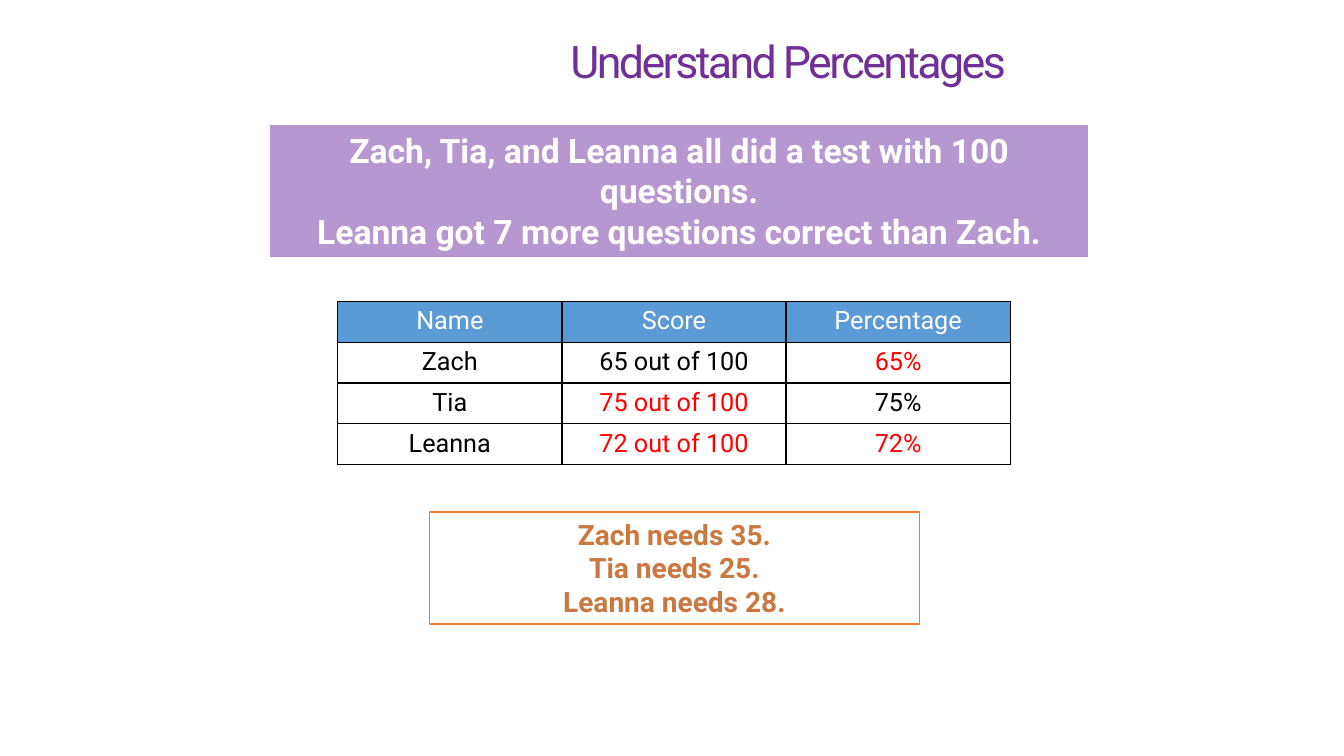
from lxml.etree import SubElement
from pptx import Presentation
from pptx.dml.color import RGBColor
from pptx.enum.shapes import MSO_SHAPE
from pptx.enum.text import MSO_ANCHOR, MSO_AUTO_SIZE, PP_ALIGN
from pptx.oxml.ns import qn
from pptx.util import Inches, Pt

FONT = "Roboto"
TITLE_PURPLE = RGBColor(0x70, 0x30, 0x96)
BANNER_PURPLE = RGBColor(0x70, 0x30, 0xA0)
HEADER_BLUE = RGBColor(0x5B, 0x9B, 0xD5)
ANSWER_RED = RGBColor(0xFF, 0x00, 0x00)
ORANGE = RGBColor(0xED, 0x7D, 0x31)
BROWN = RGBColor(0xCA, 0x78, 0x40)
BLACK = RGBColor(0x00, 0x00, 0x00)
WHITE = RGBColor(0xFF, 0xFF, 0xFF)

SCORES = [
    ["Name", "Score", "Percentage"],
    ["Zach", "65 out of 100", "65%"],
    ["Tia", "75 out of 100", "75%"],
    ["Leanna", "72 out of 100", "72%"],
]
ANSWERS = {"65%", "75 out of 100", "72 out of 100", "72%"}


def write(text_frame, text, size, color, bold=False, align=PP_ALIGN.CENTER):
    text_frame.text = text
    for paragraph in text_frame.paragraphs:
        paragraph.alignment = align
        for run in paragraph.runs:
            run.font.name = FONT
            run.font.size = Pt(size)
            run.font.bold = bold
            run.font.color.rgb = color


def add_title(slide, left, top, width, height):
    title = slide.shapes.add_textbox(
        Inches(left), Inches(top), Inches(width), Inches(height))
    frame = title.text_frame
    frame.word_wrap = False
    frame.auto_size = MSO_AUTO_SIZE.SHAPE_TO_FIT_TEXT
    write(frame, "Understand Percentages", 32, TITLE_PURPLE, align=PP_ALIGN.LEFT)
    # Tighter letter spacing, in hundredths of a point
    frame.paragraphs[0].runs[0].font._element.set("spc", "-190")


def add_panel(slide, left, top, width, height, text, size, color):
    panel = slide.shapes.add_shape(
        MSO_SHAPE.RECTANGLE,
        Inches(left), Inches(top), Inches(width), Inches(height))
    panel.shadow.inherit = False
    frame = panel.text_frame
    frame.word_wrap = True
    frame.auto_size = MSO_AUTO_SIZE.SHAPE_TO_FIT_TEXT
    frame.vertical_anchor = MSO_ANCHOR.TOP
    write(frame, text, size, color, bold=True)
    return panel


def add_question(slide, left, top, width, height):
    question = add_panel(
        slide, left, top, width, height,
        "Zach, Tia, and Leanna all did a test with 100 questions.\n"
        "Leanna got 7 more questions correct than Zach.", 24, WHITE)
    question.line.fill.background()
    question.fill.solid()
    question.fill.fore_color.rgb = BANNER_PURPLE
    # Half-transparent fill
    fill_color = question.fill._xPr.find(qn("a:solidFill"))[0]
    SubElement(fill_color, qn("a:alpha"), val="50000")


def add_needs(slide, left, top, width, height):
    needs = add_panel(
        slide, left, top, width, height,
        "Zach needs 35.\nTia needs 25.\nLeanna needs 28.", 20, BROWN)
    needs.fill.background()
    needs.line.color.rgb = ORANGE
    needs.line.width = Pt(1)


def add_borders(cell):
    properties = cell._tc.get_or_add_tcPr()
    for position, side in enumerate(("a:lnL", "a:lnR", "a:lnT", "a:lnB")):
        border = SubElement(properties, qn(side), w=str(Pt(1)))
        solid = SubElement(border, qn("a:solidFill"))
        SubElement(solid, qn("a:srgbClr"), val=str(BLACK))
        # Borders come before the cell's fill
        properties.insert(position, border)


def add_scores(slide, left, top, width, height):
    scores = slide.shapes.add_table(
        len(SCORES), len(SCORES[0]),
        Inches(left), Inches(top), Inches(width), Inches(height)).table
    for row_index, entries in enumerate(SCORES):
        is_header = row_index == 0
        for column_index, entry in enumerate(entries):
            cell = scores.cell(row_index, column_index)
            cell.fill.solid()
            cell.fill.fore_color.rgb = HEADER_BLUE if is_header else WHITE
            if is_header:
                color = WHITE
            else:
                color = ANSWER_RED if entry in ANSWERS else BLACK
            write(cell.text_frame, entry, 18, color)
            add_borders(cell)


def main():
    presentation = Presentation()
    presentation.slide_width = Inches(13.33)
    presentation.slide_height = Inches(7.5)
    slide = presentation.slides.add_slide(presentation.slide_layouts[6])

    add_title(slide, 5.56, 0.29, 4.57, 0.64)
    add_scores(slide, 3.35, 2.99, 6.67, 1.62)
    add_needs(slide, 4.26, 5.08, 4.86, 1.11)
    add_question(slide, 2.68, 1.24, 8.11, 1.31)

    presentation.save("out.pptx")


if __name__ == "__main__":
    main()
